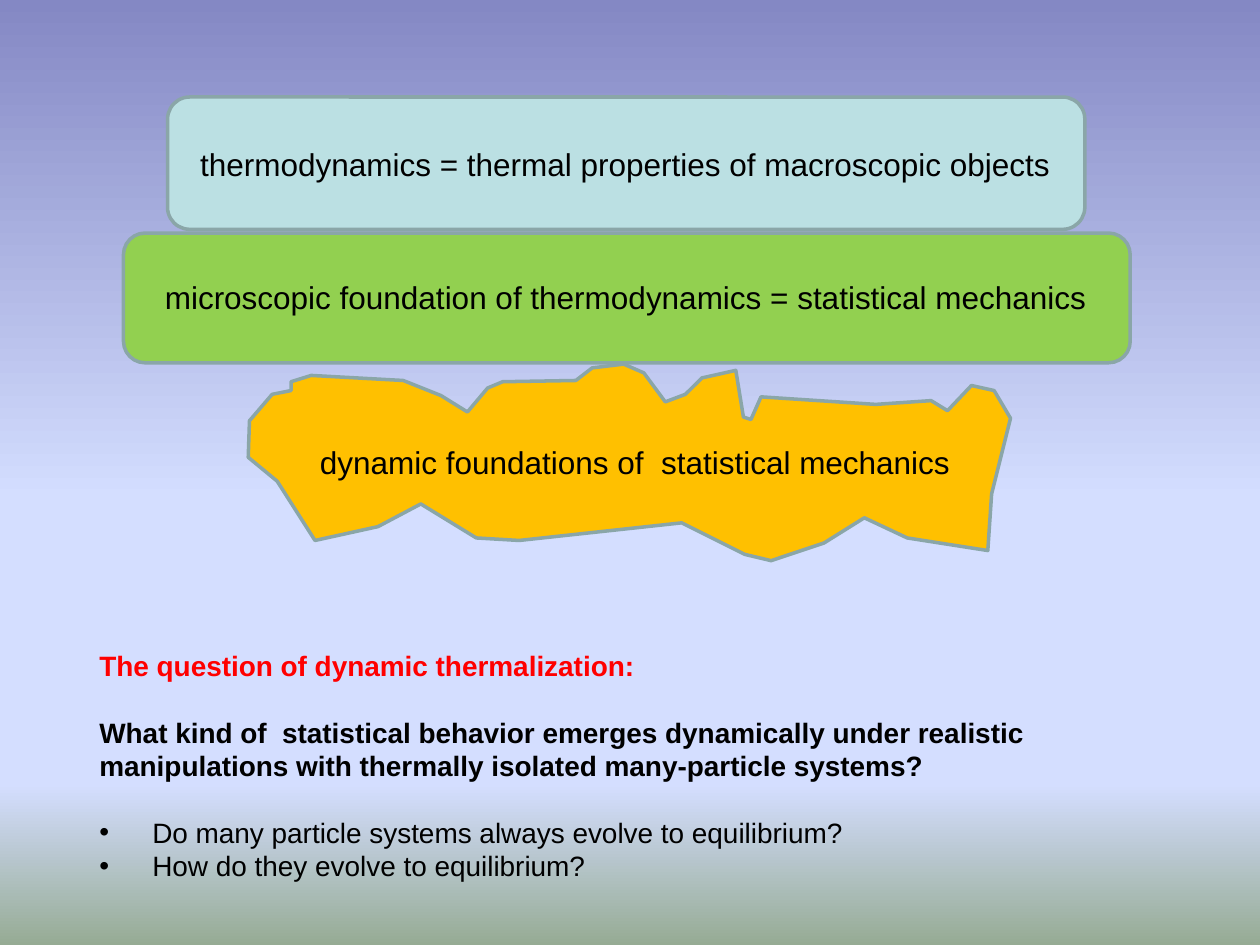
import pptx
import pptx.dml.color
import pptx.enum.shapes
import pptx.enum.text
import pptx.oxml.ns
import pptx.util
from lxml import etree

SCALE = 9144
FONT = "Arial"
BLACK = "000000"
EDGE = "8AA6A8"
BACKGROUND = [(0, "8488C4"), (53, "D4DEFF"), (83, "D4DEFF"), (100, "96AB94")]
LAYERS = [
    ("thermodynamics = thermal properties of macroscopic objects",
     (133, 77, 728, 105), "BBE0E3", (149, 110, 701, 40)),
    ("microscopic foundation of thermodynamics = statistical mechanics",
     (98, 185, 799, 103), "92D050", (121, 216, 802, 40)),
]
ROUGH_OUTLINE = [
    (231, 303), (247, 298), (320, 302), (350, 314), (371, 327), (387, 308),
    (399, 303), (457, 302), (470, 292), (495, 289), (511, 296), (528, 319),
    (544, 313), (557, 300), (584, 294), (590, 331), (596, 333), (604, 315),
    (695, 321), (739, 318), (752, 326), (771, 306), (789, 310), (802, 332),
    (787, 392), (784, 437), (720, 427), (686, 411), (654, 431), (612, 445),
    (591, 440), (541, 415), (412, 429), (378, 427), (334, 400), (300, 418),
    (250, 429), (220, 382), (197, 363), (198, 334), (216, 313), (231, 310),
]


def px(*lengths):
    """Turn whole px into EMU lengths."""
    return [pptx.util.Emu(length * SCALE) for length in lengths]


def color(value):
    """Return the colour of a hex string."""
    return pptx.dml.color.RGBColor.from_string(value)


def paint_background(page, stops):
    """Fill the page with a gradient running from top to bottom."""
    fill = page.background.fill
    fill.gradient()
    fill.gradient_angle = 270
    names = pptx.oxml.ns.qn
    stop_list = page.element.find(".//" + names("a:gsLst"))
    for old_stop in list(stop_list):
        stop_list.remove(old_stop)
    for percent, value in stops:
        stop = etree.SubElement(stop_list, names("a:gs"), pos=str(percent * 1000))
        etree.SubElement(stop, names("a:srgbClr"), val=value)


def style_shape(shape, fill):
    """Give a shape its fill and outline."""
    shape.shadow.inherit = False
    shape.fill.solid()
    shape.fill.fore_color.rgb = color(fill)
    shape.line.color.rgb = color(EDGE)
    shape.line.width = pptx.util.Pt(2)


def add_rounded_block(shapes, place, fill):
    """Add a rounded rectangle."""
    kind = pptx.enum.shapes.MSO_SHAPE.ROUNDED_RECTANGLE
    style_shape(shapes.add_shape(kind, *px(*place)), fill)


def add_rough_block(shapes, outline, fill):
    """Add a closed shape with an irregular outline."""
    builder = shapes.build_freeform(*outline[0], scale=SCALE)
    builder.add_line_segments(outline[1:], close=True)
    style_shape(builder.convert_to_shape(), fill)


def add_text_box(shapes, place):
    """Add an empty wrapping text box and return its text frame."""
    frame = shapes.add_textbox(*px(*place)).text_frame
    frame.word_wrap = True
    return frame


def write(para, text, size=18, value=BLACK, bold=False, line=None, before=0, bullet=False):
    """Write formatted text into a paragraph."""
    span = para.add_run()
    span.text = text
    span.font.name = FONT
    span.font.size = pptx.util.Pt(size)
    span.font.bold = bold
    span.font.color.rgb = color(value)
    para.space_before = pptx.util.Pt(before)
    if line:
        para.line_spacing = pptx.util.Pt(line)
    if bullet:
        indent = px(42)[0]
        properties = para._p.get_or_add_pPr()
        properties.set("marL", str(indent))
        properties.set("indent", str(-indent))
        names = pptx.oxml.ns.qn
        etree.SubElement(properties, names("a:buFont"), typeface=FONT)
        etree.SubElement(properties, names("a:buChar"), char="•")


def add_questions(page):
    """Add the heading, the main question and its bullets."""
    frame = add_text_box(page.shapes, (69, 510, 771, 199))
    lines = [
        ("The question of dynamic thermalization:", dict(value="FF0000", bold=True)),
        ("What kind of  statistical behavior emerges dynamically under realistic",
         dict(bold=True, before=19)),
        ("manipulations with thermally isolated many-particle systems?", dict(bold=True)),
        ("Do many particle systems always evolve to equilibrium?",
         dict(bullet=True, before=19)),
        ("How do they evolve to equilibrium?", dict(bullet=True)),
    ]
    for index, (text, style) in enumerate(lines):
        para = frame.add_paragraph() if index else frame.paragraphs[0]
        write(para, text, size=16, line=19.1, **style)


def main():
    """Build the slide and save it."""
    deck = pptx.Presentation()
    deck.slide_width, deck.slide_height = px(1000, 750)
    page = deck.slides.add_slide(deck.slide_layouts[6])
    paint_background(page, BACKGROUND)
    for text, block_place, fill, text_place in LAYERS:
        shapes = page.shapes.add_group_shape().shapes
        add_rounded_block(shapes, block_place, fill)
        write(add_text_box(shapes, text_place).paragraphs[0], text)
    shapes = page.shapes.add_group_shape().shapes
    add_rough_block(shapes, ROUGH_OUTLINE, "FFC000")
    frame = add_text_box(shapes, (244, 347, 525, 40))
    write(frame.paragraphs[0], "dynamic foundations of  statistical mechanics")
    add_questions(page)
    deck.save("out.pptx")


if __name__ == "__main__":
    main()
